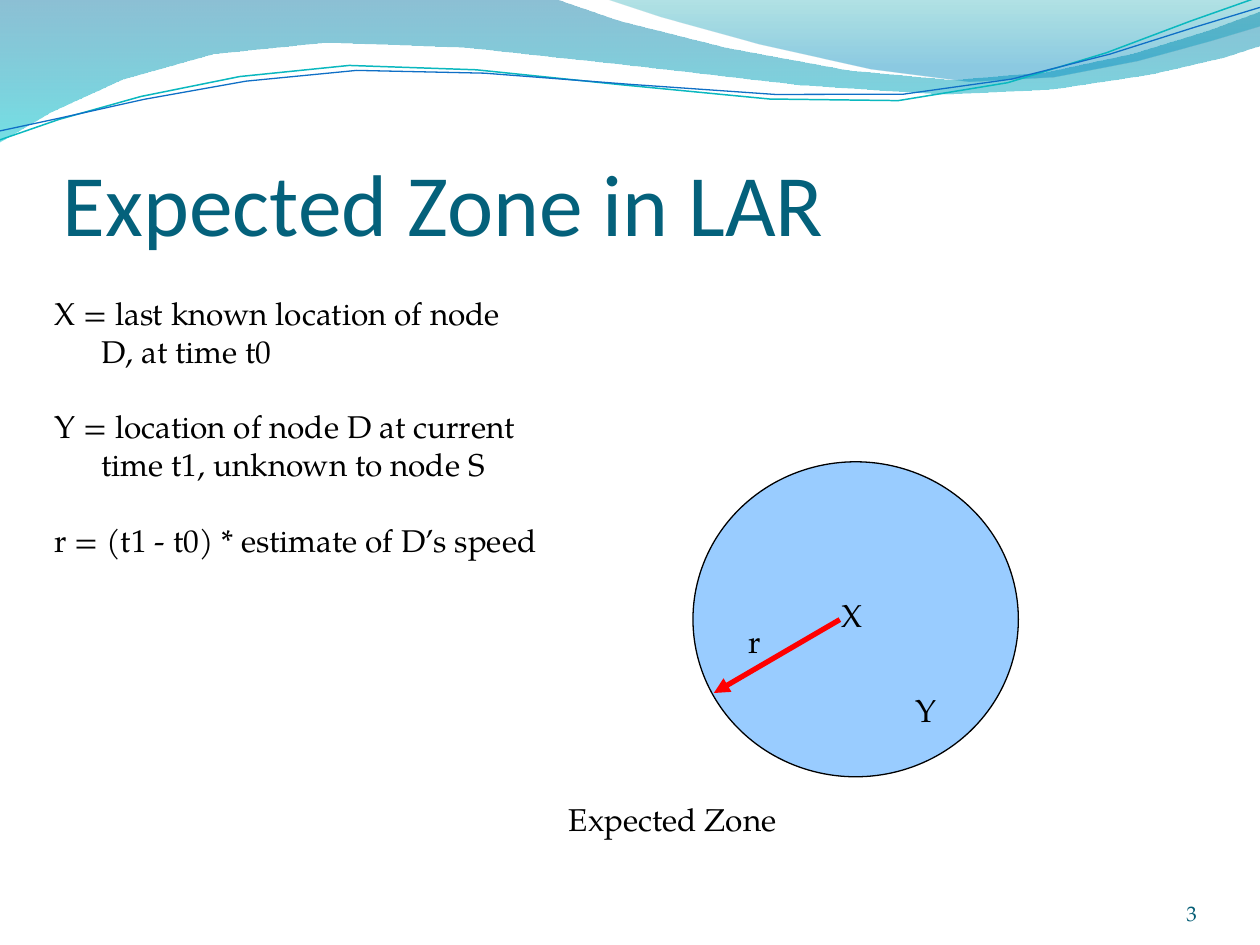
from lxml import etree
from pptx import Presentation, util as u
from pptx.dml.color import RGBColor
from pptx.enum import shapes, text
from pptx.oxml import ns

COLORS = {
    "black": "000000", "title": "04617B", "number": "045D75",
    "zone": "99CCFF", "radius": "FF0000",
    "blue": "0074A1", "aqua": "00C6CF", "teal": "00A1A9", "sky": "008BBF",
    "teal_line": "0AB8BF", "blue_line": "0F6FC6",
}
C = {name: RGBColor.from_string(value) for name, value in COLORS.items()}
SERIF = "TeX Gyre Pagella"
STEPS = 4  # straight pieces per curve

prs = Presentation()
prs.slide_width, prs.slide_height = u.Cm(25.4), u.Cm(19.05)
s = prs.slides.add_slide(prs.slide_layouts[6])


def add_wave(start, segments, close):
    """Outline from straight (x, y) and cubic (x1, y1, x2, y2, x, y) segments."""
    points = [start]
    for seg in segments:
        if len(seg) == 2:
            points.append(seg)
            continue
        x0, y0 = points[-1]
        x1, y1, x2, y2, x3, y3 = seg
        for i in range(1, STEPS + 1):
            t = i / STEPS
            a, b, c, d = (1 - t)**3, 3 * t * (1 - t)**2, 3 * t**2 * (1 - t), t**3
            points.append((a * x0 + b * x1 + c * x2 + d * x3,
                           a * y0 + b * y1 + c * y2 + d * y3))
    points = [(u.Cm(x), u.Cm(y)) for x, y in points]
    fb = s.shapes.build_freeform(*points[0])
    fb.add_line_segments(points[1:], close=close)
    sp = fb.convert_to_shape()
    sp.shadow.inherit = False
    return sp


def add_text(lines, x, y, w, h, size=18, font=SERIF, color="black",
             anchor=text.MSO_ANCHOR.MIDDLE, insets=(0.25, 0.13, 0.25, 0.13)):
    tf = s.shapes.add_textbox(u.Cm(x), u.Cm(y), u.Cm(w), u.Cm(h)).text_frame
    tf.word_wrap = True
    tf.vertical_anchor = anchor
    (tf.margin_left, tf.margin_top,
     tf.margin_right, tf.margin_bottom) = [u.Cm(m) for m in insets]
    tf.text = "\n".join(lines)
    for p in tf.paragraphs:
        for r in p.runs:
            r.font.size, r.font.name = u.Pt(size), font
            r.font.color.rgb = C[color]
    return tf


# Filled waves along the top
filled_waves = [
    ((0, 0),
     [(11.18, -0.03), (12.09, 0.43, 16.87, 1.6, 19.25, 1.6),
      (21.67, 1.6, 24.33, 0.66, 25.4, 0.23), (25.43, 0.91),
      (24.97, 1.12, 22.1, 1.93, 18.95, 1.9),
      (15.8, 1.9, 9.7, 0.71, 6.53, 0.86),
      (3.28, 0.91, 1.17, 2.11, -0.03, 2.87)],
     [(0, "blue", 45), (1, "aqua", 55)]),
    ((12.17, -0.03),
     [(12.93, 0.28, 17.32, 1.57, 19.53, 1.65),
      (21.74, 1.75, 24.41, 0.81, 25.4, 0.53), (25.4, 0)],
     [(0, "teal", 30), (0.8, "sky", 45)]),
]
for start, segments, stops in filled_waves:
    sp = add_wave(start, segments, True)
    sp.line.fill.background()
    sp.fill.gradient()
    sp.fill.gradient_angle = 270
    for stop, (position, color, opacity) in zip(sp.fill.gradient_stops, stops):
        stop.position = position
        stop.color.rgb = C[color]
    clrs = list(sp._element.spPr.iter(ns.qn("a:srgbClr")))
    for clr, (position, color, opacity) in zip(clrs, stops):
        etree.SubElement(clr, ns.qn("a:alpha")).set("val", str(opacity * 1000))

# Thin wave lines
wave_lines = [
    ((0, 2.82),
     [(1.22, 2.36, 4.01, 1.45, 7.04, 1.32),
      (10.03, 1.19, 15.06, 2.26, 18.11, 2.03),
      (21.16, 1.8, 23.83, 0.38, 25.35, -0.05)], "teal_line", 0.85),
    ((0, 2.64),
     [(1.19, 2.44, 4.17, 1.55, 7.19, 1.42),
      (10.24, 1.3, 15.16, 2.13, 18.21, 1.9),
      (21.23, 1.7, 23.9, 0.53, 25.4, 0.15)], "blue_line", 0.75),
]
for start, segments, color, width in wave_lines:
    sp = add_wave(start, segments, False)
    sp.fill.background()
    sp.line.color.rgb, sp.line.width = C[color], u.Pt(width)

# Title and slide number
add_text(["Expected Zone in LAR"], 1.27, 1.94, 22.86, 3.18, 50, "Calibri", "title",
         text.MSO_ANCHOR.BOTTOM, (0, 0.13, 0, 0))
tf = add_text(["3"], 22.02, 17.65, 2.11, 1.02, 12, SERIF, "number",
              text.MSO_ANCHOR.BOTTOM, (0, 0, 0, 0))
tf.paragraphs[0].alignment = text.PP_ALIGN.RIGHT

# Expected zone circle
sp = s.shapes.add_shape(shapes.MSO_SHAPE.OVAL,
                        u.Cm(13.97), u.Cm(9.31), u.Cm(6.56), u.Cm(6.35))
sp.shadow.inherit = False
sp.fill.solid()
sp.fill.fore_color.rgb = C["zone"]
sp.line.color.rgb, sp.line.width = C["black"], u.Pt(0.75)

# Radius arrow
radius = s.shapes.add_connector(shapes.MSO_CONNECTOR.STRAIGHT,
                                u.Cm(16.93), u.Cm(12.49), u.Cm(14.39), u.Cm(13.97))
radius.line.color.rgb, radius.line.width = C["radius"], u.Pt(3)
spPr = radius._element.spPr
etree.SubElement(spPr.find(ns.qn("a:ln")), ns.qn("a:tailEnd")).set("type", "triangle")
etree.SubElement(spPr, ns.qn("a:effectLst"))

# Labels
for label, x, y, w in [("X", 16.72, 11.85, 1), ("Y", 18.2, 13.76, 1),
                       ("r", 14.83, 12.37, 0.8), ("Expected Zone", 11.22, 15.97, 5.54)]:
    add_text([label], x, y, w, 1.09)

# Definitions: continuation lines are indented, new terms are spaced apart
definitions = [
    "X = last known location of node", "D, at time t0",
    "Y = location of node D at current", "time t1, unknown to node S",
    "r = (t1 - t0) * estimate of D’s speed",
]
tf = add_text(definitions, 0.85, 5.51, 11.84, 6.17)
for i, p in enumerate(tf.paragraphs):
    if i % 2:
        p._p.get_or_add_pPr().set("marL", str(u.Cm(0.95)))
    elif i:
        p.space_before = u.Pt(21.7)

prs.save("out.pptx")
